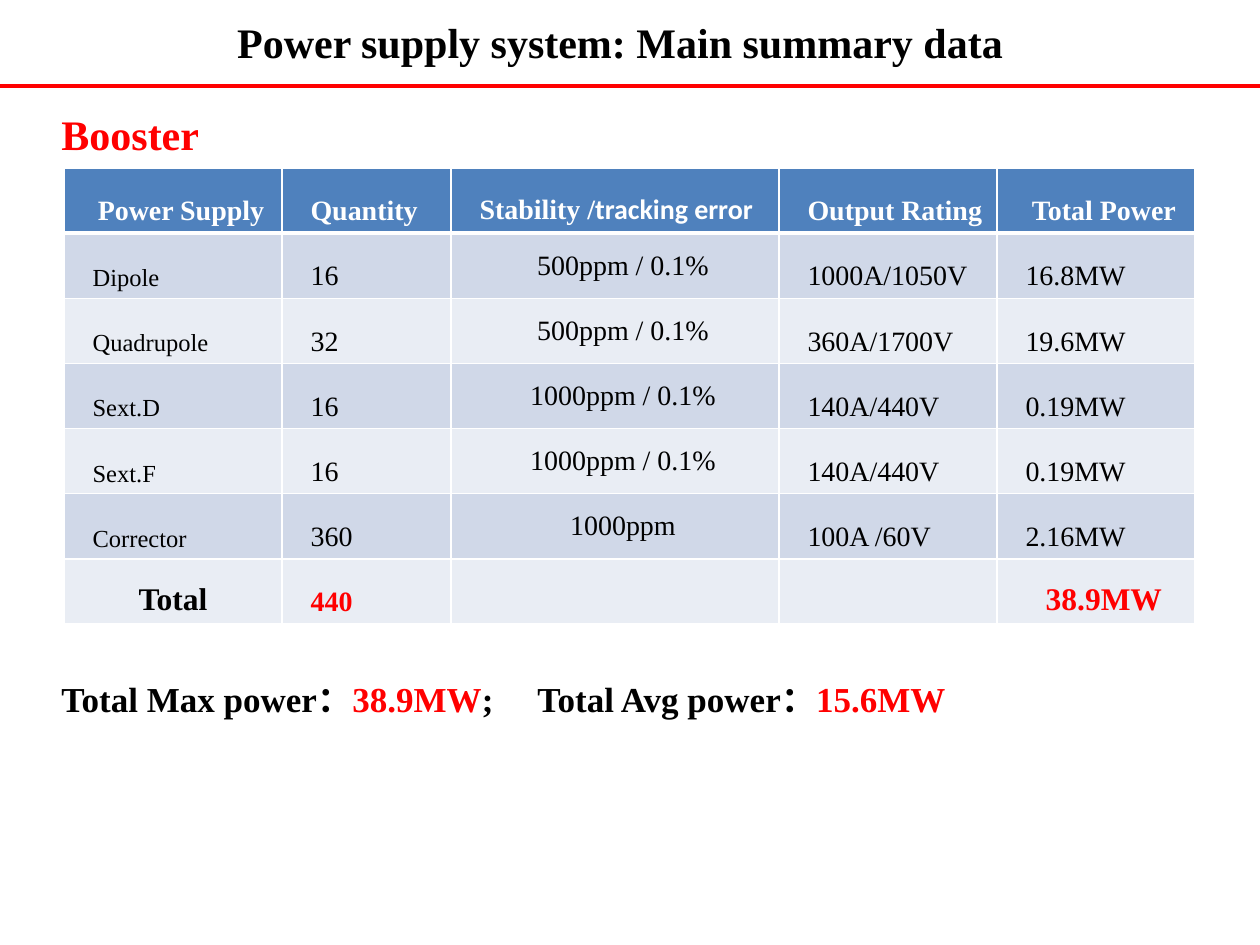
from dataclasses import dataclass, replace

from lxml import etree
from pptx import Presentation
from pptx import util as u
from pptx.dml.color import RGBColor
from pptx.enum import shapes, text
from pptx.oxml import ns

PX = 914400 / 126
COLORS = {
    "black": "000000",
    "white": "FFFFFF",
    "red": "FF0000",
    "header": "4F81BD",
    "dark band": "D0D8E8",
    "light band": "E9EDF4",
}
SERIF = "Times New Roman"
LEFT, CENTER = text.PP_ALIGN.LEFT, text.PP_ALIGN.CENTER
COLUMN_WIDTHS = [218, 169, 328, 218, 198]
ROW_HEIGHT = 65
ROWS = [
    ["Power Supply", "Quantity", "Stability /", "Output Rating", "Total Power"],
    ["Dipole", "16", "500ppm / 0.1%", "1000A/1050V", "16.8MW"],
    ["Quadrupole", "32", "500ppm / 0.1%", "360A/1700V", "19.6MW"],
    ["Sext.D", "16", "1000ppm / 0.1%", "140A/440V", "0.19MW"],
    ["Sext.F", "16", "1000ppm / 0.1%", "140A/440V", "0.19MW"],
    ["Corrector", "360", "1000ppm", "100A /60V", "2.16MW"],
    ["Total", "440", "", "", "38.9MW"],
]


@dataclass(frozen=True)
class Style:
    size: int
    color: str = "black"
    bold: bool = True
    align: int = LEFT
    spacing: int = 30
    indent: int = 0


@dataclass(frozen=True)
class Box:
    left: int
    top: int
    width: int
    height: int


HEADER = Style(16, "white", indent=16)
BODY = Style(16, bold=False, indent=16)
COLUMN_STYLES = [
    replace(BODY, size=14),
    BODY,
    replace(BODY, align=CENTER, spacing=0),
    BODY,
    BODY,
]
HEADER_STYLES = [replace(HEADER, align=CENTER), HEADER, HEADER, HEADER,
                 replace(HEADER, align=CENTER)]
TOTAL_STYLES = [
    Style(18, align=CENTER),
    Style(16, "red", indent=16),
    BODY,
    BODY,
    Style(18, "red", align=CENTER, indent=16),
]


def px(length: int) -> int:
    return round(length * PX)


def rgb(name: str) -> RGBColor:
    return RGBColor.from_string(COLORS[name])


def format_paragraph(paragraph, style: Style) -> None:
    paragraph.alignment = style.align
    if style.spacing:
        paragraph.line_spacing = u.Pt(style.spacing)
    if style.indent:
        properties = paragraph._p.get_or_add_pPr()
        properties.set("marL", "0")
        properties.set("indent", str(px(style.indent)))
    font = paragraph.font
    font.name, font.size, font.bold = SERIF, u.Pt(style.size), style.bold
    font.color.rgb = rgb(style.color)


def add_text(slide, box: Box, style: Style, content: str = ""):
    shape = slide.shapes.add_textbox(
        px(box.left), px(box.top), px(box.width), px(box.height))
    frame = shape.text_frame
    frame.word_wrap = True
    frame.vertical_anchor = text.MSO_ANCHOR.MIDDLE
    paragraph = frame.paragraphs[0]
    if content:
        paragraph.add_run().text = content
    return paragraph, style


def add_label(slide, box: Box, style: Style, content: str) -> None:
    format_paragraph(*add_text(slide, box, style, content))


def add_power_totals(slide, box: Box, style: Style, tab: int) -> None:
    paragraph, style = add_text(slide, box, style)
    tabs = etree.SubElement(paragraph._p.get_or_add_pPr(), ns.qn("a:tabLst"))
    etree.SubElement(tabs, ns.qn("a:tab"), pos=str(px(tab)), algn="l")
    format_paragraph(paragraph, style)
    for content, color in [
        ("Total Max power：", "black"),
        ("38.9MW", "red"),
        (";\tTotal Avg power：", "black"),
        ("15.6MW", "red"),
    ]:
        run = paragraph.add_run()
        run.text = content
        run.font.color.rgb = rgb(color)


def add_rule(slide, y: int, width: int) -> None:
    line = slide.shapes.add_connector(
        shapes.MSO_CONNECTOR.STRAIGHT, 0, px(y), px(width), px(y))
    line.line.color.rgb = rgb("red")
    line.line.width = u.Pt(2.25)
    etree.SubElement(line._element.spPr, ns.qn("a:effectLst"))


def set_borders(cell, top: int, bottom: int) -> None:
    properties = cell._tc.get_or_add_tcPr()
    widths = {"lnL": 1, "lnR": 1, "lnT": top, "lnB": bottom}
    for index, (side, width) in enumerate(widths.items()):
        border = etree.Element(ns.qn(f"a:{side}"), w=str(u.Pt(width)))
        fill = etree.SubElement(border, ns.qn("a:solidFill"))
        etree.SubElement(fill, ns.qn("a:srgbClr"), val=COLORS["white"])
        properties.insert(index, border)


def add_supply_table(slide, left: int, top: int) -> None:
    table = slide.shapes.add_table(
        len(ROWS), len(COLUMN_WIDTHS), px(left), px(top),
        px(sum(COLUMN_WIDTHS)), px(ROW_HEIGHT * len(ROWS))).table
    for column, width in zip(table.columns, COLUMN_WIDTHS):
        column.width = px(width)
    last = len(ROWS) - 1
    for i, values in enumerate(ROWS):
        table.rows[i].height = px(ROW_HEIGHT)
        styles = {0: HEADER_STYLES, last: TOTAL_STYLES}.get(i, COLUMN_STYLES)
        band = "header" if i == 0 else "dark band" if i % 2 else "light band"
        for j, (value, style) in enumerate(zip(values, styles)):
            cell = table.cell(i, j)
            cell.vertical_anchor = text.MSO_ANCHOR.MIDDLE
            cell.fill.solid()
            cell.fill.fore_color.rgb = rgb(band)
            set_borders(cell, 3 if i == 1 else 1, 3 if i == 0 else 1)
            paragraph = cell.text_frame.paragraphs[0]
            format_paragraph(paragraph, style)
            if value:
                paragraph.add_run().text = value
    run = table.cell(0, 2).text_frame.paragraphs[0].add_run()
    run.text = "tracking error"
    run.font.name = "Calibri"


def main() -> None:
    presentation = Presentation()
    presentation.slide_width, presentation.slide_height = px(1260), px(945)
    slide = presentation.slides.add_slide(presentation.slide_layouts[6])
    add_label(slide, Box(49, 0, 1142, 84),
              Style(24, align=CENTER, spacing=0),
              "Power supply system: Main summary data")
    add_rule(slide, 86, 1260)
    add_label(slide, Box(49, 100, 1142, 65), Style(24, "red"), "Booster")
    add_supply_table(slide, 64, 168)
    add_power_totals(slide, Box(49, 661, 1142, 65), Style(20), 476)
    presentation.save("out.pptx")


if __name__ == "__main__":
    main()
